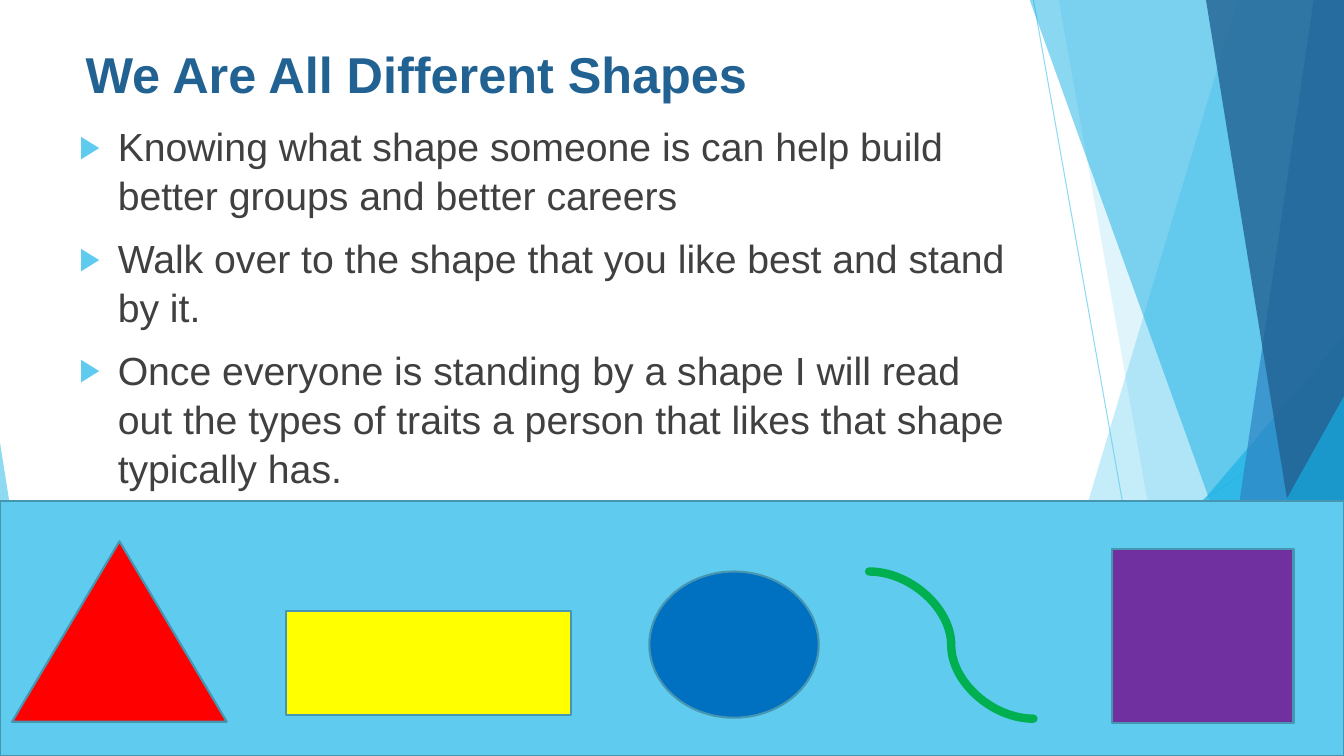
from lxml.etree import SubElement
from pptx import Presentation
from pptx.dml.color import RGBColor
from pptx.enum.shapes import MSO_CONNECTOR, MSO_SHAPE
from pptx.enum.text import MSO_ANCHOR
from pptx.oxml.ns import qn
from pptx.util import Inches, Pt

COLORS = {
    "sky": "5FCBEF", "cyan": "17B0E4", "blue": "2E83C3", "navy": "226292",
    "text": "404040", "outline": "4696B1", "red": "FF0000", "yellow": "FFFF00",
    "circle": "0070C0", "green": "00B050", "purple": "7030A0",
}
WIDTH, HEIGHT = 13.33, 7.5

presentation = Presentation()
presentation.slide_width = Inches(WIDTH)
presentation.slide_height = Inches(HEIGHT)
slide = presentation.slides.add_slide(presentation.slide_layouts[6])
shapes = slide.shapes


def add_text(text, left, top, width, height, size, color, bold=False,
             anchor=MSO_ANCHOR.TOP, bullet=None):
    box = shapes.add_textbox(Inches(left), Inches(top), Inches(width), Inches(height))
    frame = box.text_frame
    frame.word_wrap = True
    frame.vertical_anchor = anchor
    frame.text = text
    for index, paragraph in enumerate(frame.paragraphs):
        font = paragraph.runs[0].font
        font.name, font.size, font.bold = "Arial", Pt(size), bold
        font.color.rgb = RGBColor.from_string(COLORS[color])
        if bullet:
            paragraph.line_spacing = 1.04
            paragraph.space_before = Pt(10 if index else 0)
            properties = paragraph._p.get_or_add_pPr()
            properties.set("marL", str(Inches(0.38)))
            properties.set("indent", str(-Inches(0.38)))
            bullet_color = SubElement(properties, qn("a:buClr"))
            SubElement(bullet_color, qn("a:srgbClr"), val=COLORS["sky"])
            SubElement(properties, qn("a:buSzPct"), val="80000")
            SubElement(properties, qn("a:buFont"), typeface="Arial")
            SubElement(properties, qn("a:buChar"), char=bullet)


def paint(shape, color, opacity=100, outline=None):
    shape.shadow.inherit = False
    shape.fill.solid()
    shape.fill.fore_color.rgb = RGBColor.from_string(COLORS[color])
    if opacity < 100:
        fill_color = shape.element.spPr.find(".//" + qn("a:srgbClr"))
        SubElement(fill_color, qn("a:alpha"), val=str(opacity * 1000))
    if outline:
        shape.line.color.rgb = RGBColor.from_string(COLORS[outline])
        shape.line.width = Pt(1.5)
    else:
        shape.line.fill.background()


connectors = [
    (MSO_CONNECTOR.STRAIGHT, 10.25, 0, 11.58, HEIGHT, "sky", 0.75, 70),
    (MSO_CONNECTOR.STRAIGHT, WIDTH, 4.03, 8.12, HEIGHT, "sky", 0.75, 70),
    (MSO_CONNECTOR.CURVE, 8.62, 5.67, 10.25, 7.13, "green", 6, 100),
]
drawn_connectors = []
for kind, x1, y1, x2, y2, color, weight, opacity in connectors:
    connector = shapes.add_connector(kind, Inches(x1), Inches(y1), Inches(x2), Inches(y2))
    connector.line.color.rgb = RGBColor.from_string(COLORS[color])
    connector.line.width = Pt(weight)
    properties = connector.element.spPr
    if opacity < 100:
        line_color = properties.find(".//" + qn("a:srgbClr"))
        SubElement(line_color, qn("a:alpha"), val=str(opacity * 1000))
    SubElement(properties, qn("a:effectLst"))
    drawn_connectors.append(connector)
curve = drawn_connectors[-1]
curve.element.spPr.find(qn("a:ln")).set("cap", "rnd")

facets = [
    ("panel", (12.28, 10.04), "sky", 36),
    ("panel", (10.5, 11.83), "sky", 20),
    ("triangle", (9.77, 3.33, 3.56, 1), "cyan", 66),
    ("panel", (10.21, 12.91), "cyan", 50),
    ("panel", (13.03, 11.92), "blue", 70),
    ("panel", (11.96, 13.18), "navy", 80),
    ("triangle", (11.34, 3.93, 1.99, 1), "cyan", 66),
    ("triangle", (0, 4.39, 0.49, 0), "sky", 70),
]
for kind, geometry, color, opacity in facets:
    if kind == "panel":
        top_left, bottom_left = geometry
        builder = shapes.build_freeform(Inches(top_left), Inches(-0.01))
        corners = [(WIDTH, -0.01), (WIDTH, HEIGHT), (bottom_left, HEIGHT)]
        builder.add_line_segments([(Inches(x), Inches(y)) for x, y in corners])
        facet = builder.convert_to_shape()
    else:
        left, top, width, apex = geometry
        facet = shapes.add_shape(MSO_SHAPE.ISOSCELES_TRIANGLE, Inches(left), Inches(top),
                                 Inches(width), Inches(HEIGHT - top))
        facet.adjustments[0] = apex
    paint(facet, color, opacity)

add_text("We Are All Different Shapes", 0.75, 0.33, 9.4, 0.8, 36, "navy",
         bold=True, anchor=MSO_ANCHOR.MIDDLE)
instructions = [
    "Knowing what shape someone is can help build better groups and better careers",
    "Walk over to the shape that you like best and stand by it.",
    "Once everyone is standing by a shape I will read out the types of traits "
    "a person that likes that shape typically has.",
]
add_text("\n".join(instructions), 0.69, 1.15, 9.4, 4.24, 28, "text", bullet="▶")

choices = [
    (MSO_SHAPE.RECTANGLE, 0, 4.97, WIDTH, 2.53, "sky"),
    (MSO_SHAPE.ISOSCELES_TRIANGLE, 0.12, 5.37, 2.13, 1.79, "red"),
    (MSO_SHAPE.RECTANGLE, 2.84, 6.06, 2.82, 1.03, "yellow"),
    (MSO_SHAPE.FLOWCHART_CONNECTOR, 6.44, 5.67, 1.68, 1.45, "circle"),
    (MSO_SHAPE.RECTANGLE, 11.03, 5.45, 1.8, 1.72, "purple"),
]
for kind, left, top, width, height, color in choices:
    choice = shapes.add_shape(kind, Inches(left), Inches(top), Inches(width), Inches(height))
    paint(choice, color, outline="outline")
choice.element.addprevious(curve.element)

presentation.save("out.pptx")
